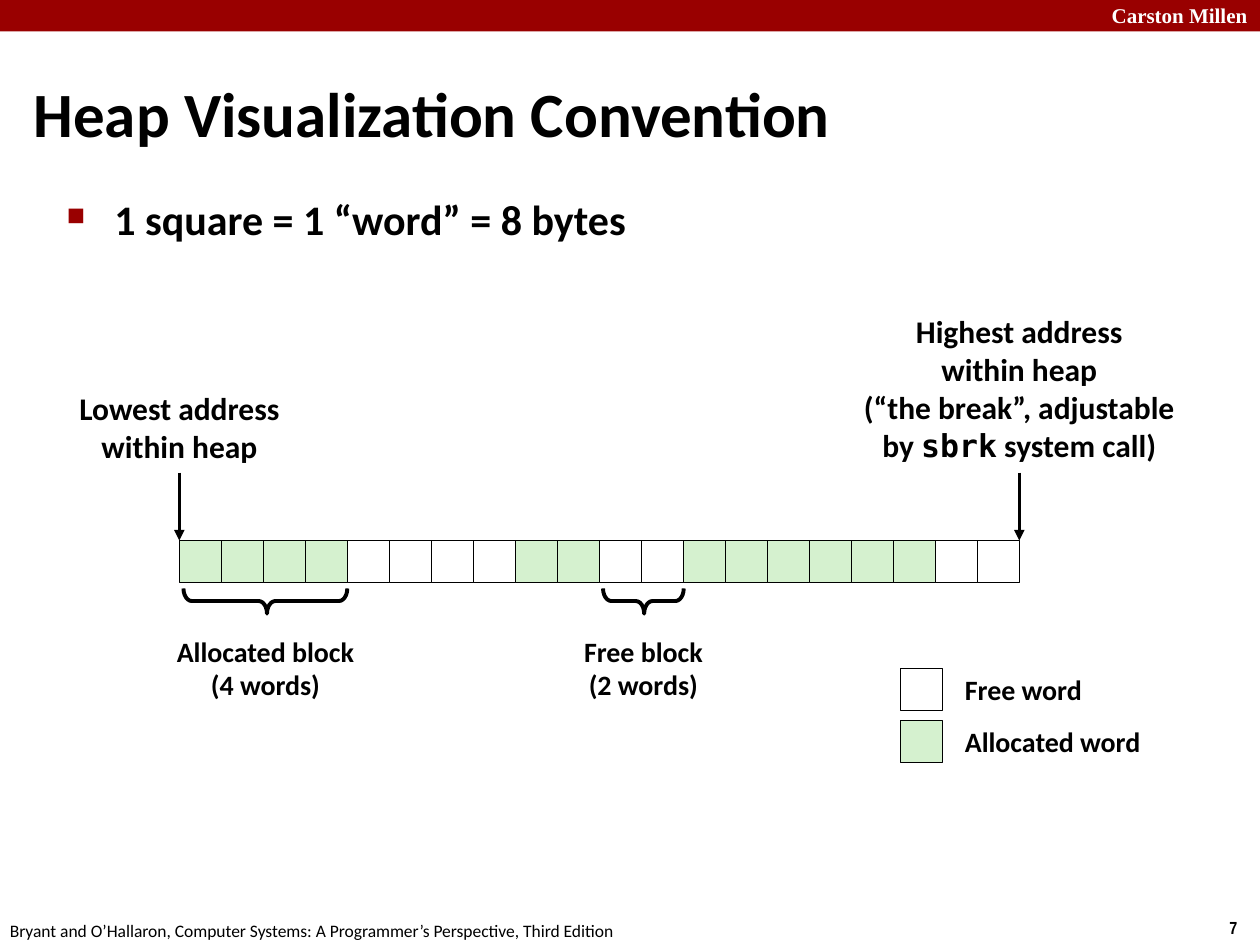
from lxml import etree
from pptx import Presentation
from pptx.dml.color import RGBColor
from pptx.enum.shapes import MSO_CONNECTOR, MSO_SHAPE
from pptx.enum.text import MSO_ANCHOR, PP_ALIGN
from pptx.oxml.ns import qn
from pptx.util import Inches, Pt

RECT, BRACE = MSO_SHAPE.RECTANGLE, MSO_SHAPE.LEFT_BRACE
STRAIGHT = MSO_CONNECTOR.STRAIGHT
LEFT, CENTER, RIGHT = PP_ALIGN.LEFT, PP_ALIGN.CENTER, PP_ALIGN.RIGHT
TOP, MIDDLE = MSO_ANCHOR.TOP, MSO_ANCHOR.MIDDLE
COLORS = {name: RGBColor.from_string(value) for name, value in {
    "ink": "000000", "banner": "990000", "allocated": "D5F1CF", "free": "FFFFFF",
}.items()}

deck = Presentation()
deck.slide_width, deck.slide_height = Inches(10), Inches(7.5)
CELL = deck.slide_width / 30
slide = deck.slides.add_slide(deck.slide_layouts[5])
shapes = slide.shapes


def grid(*cells):
    return [round(cell * CELL) for cell in cells]


def write(text, at, size=16, font="Calibri", color="ink", bold=True, align=LEFT,
          anchor=TOP, wrap=False, spacing=None, indent=0, holder=None):
    holder = holder or shapes.add_textbox(*grid(*at))
    holder.left, holder.top, holder.width, holder.height = grid(*at)
    frame = holder.text_frame
    frame.word_wrap, frame.vertical_anchor = wrap, anchor
    for number, content in enumerate(text.split("\n")):
        paragraph = frame.add_paragraph() if number else frame.paragraphs[0]
        paragraph.alignment, paragraph.line_spacing = align, spacing
        if indent:
            properties = paragraph._p.get_or_add_pPr()
            properties.set("marL", str(Inches(indent)))
            properties.set("indent", str(-Inches(indent)))
        for part, words in enumerate(content.split("`")):
            run = paragraph.add_run()
            run.text = words
            run.font.name = "DejaVu Sans Mono" if part % 2 else font
            run.font.size, run.font.bold = Pt(size), bold
            run.font.color.rgb = COLORS[color]
    return frame


banner = shapes.add_shape(RECT, *grid(0, 0, 30, 0.75))
banner.shadow.inherit = False
banner.fill.solid()
banner.fill.fore_color.rgb = COLORS["banner"]
banner.line.fill.background()

write("Carston Millen", (24, -0.09, 6, 0.9), size=12, font="Times New Roman",
      color="free", align=RIGHT, wrap=True)
write("7", (28.98, 21.69, 1.02, 0.81), size=10, font="Arial Narrow")
write("Bryant and O’Hallaron, Computer Systems: A Programmer’s Perspective, Third Edition",
      (-0.06, 21.75, 15.24, 0.81), size=10, bold=False)
write("Heap Visualization Convention", (0.5, 1.44, 29.5, 2.49), size=36,
      anchor=MIDDLE, wrap=True, indent=0.13, holder=shapes.title)

scale = write("1 square = 1 “word” = 8 bytes", (1.29, 4.47, 25.92, 16.32),
              size=24, wrap=True, indent=0.38).paragraphs[0]
scale.space_before = Pt(4.8)
bullet = scale._p.get_or_add_pPr()
bullet_color = etree.SubElement(bullet, qn("a:buClr"))
etree.SubElement(bullet_color, qn("a:srgbClr"), val=str(COLORS["banner"]))
etree.SubElement(bullet, qn("a:buSzPct"), val="60000")
etree.SubElement(bullet, qn("a:buChar"), char="■")

HEAP_LEFT, HEAP_TOP = 4.27, 12.87
BLOCKS = [("allocated", 4), ("free", 4), ("allocated", 2),
          ("free", 2), ("allocated", 6), ("free", 2)]
heap = [state for state, count in BLOCKS for _ in range(count)]
words = [(state, HEAP_LEFT + column, HEAP_TOP) for column, state in enumerate(heap)]
legend = [("free", 21.43, 15.9), ("allocated", 21.43, 17.15)]
for state, left, top in words + legend:
    word = shapes.add_shape(RECT, *grid(left, top, 1, 1))
    word.shadow.inherit = False
    word.fill.solid()
    word.fill.fore_color.rgb = COLORS[state]
    word.line.color.rgb, word.line.width = COLORS["ink"], Pt(0.25)

for state, left, top in legend:
    write(f"{state.capitalize()} word", (left + 1.25, top, 4.8, 1.11), spacing=0.98)

for label, middle, span, width in [("Allocated block\n(4 words)", 6.32, 3.9, 4.86),
                                   ("Free block\n(2 words)", 15.32, 1.92, 3.6)]:
    brace = shapes.add_shape(BRACE, *grid(middle - 0.3, 14.31 - span / 2, 0.6, span))
    brace.rotation = 270
    brace.adjustments[0], brace.adjustments[1] = 0.33, 0.51
    brace.shadow.inherit = False
    brace.fill.background()
    brace.line.color.rgb, brace.line.width = COLORS["ink"], Pt(2.25)
    write(label, (middle - width / 2, 15, width, 1.89), align=CENTER, spacing=0.98)

for address in (HEAP_LEFT, HEAP_LEFT + len(heap)):
    pointer = shapes.add_connector(STRAIGHT, *grid(address, 11.25, address, HEAP_TOP))
    pointer.line.color.rgb, pointer.line.width = COLORS["ink"], Pt(2)
    etree.SubElement(pointer.line._get_or_add_ln(), qn("a:tailEnd"), type="triangle")
    etree.SubElement(pointer._element.spPr, qn("a:effectLst"))

write("Lowest address within heap", (1.53, 9.12, 5.49, 2.13), size=18, align=CENTER, wrap=True)
write("Highest address\nwithin heap\n(“the break”, adjustable by `sbrk` system call)",
      (20.16, 7.29, 8.22, 3.93), size=18, align=CENTER, wrap=True)

deck.save("out.pptx")
